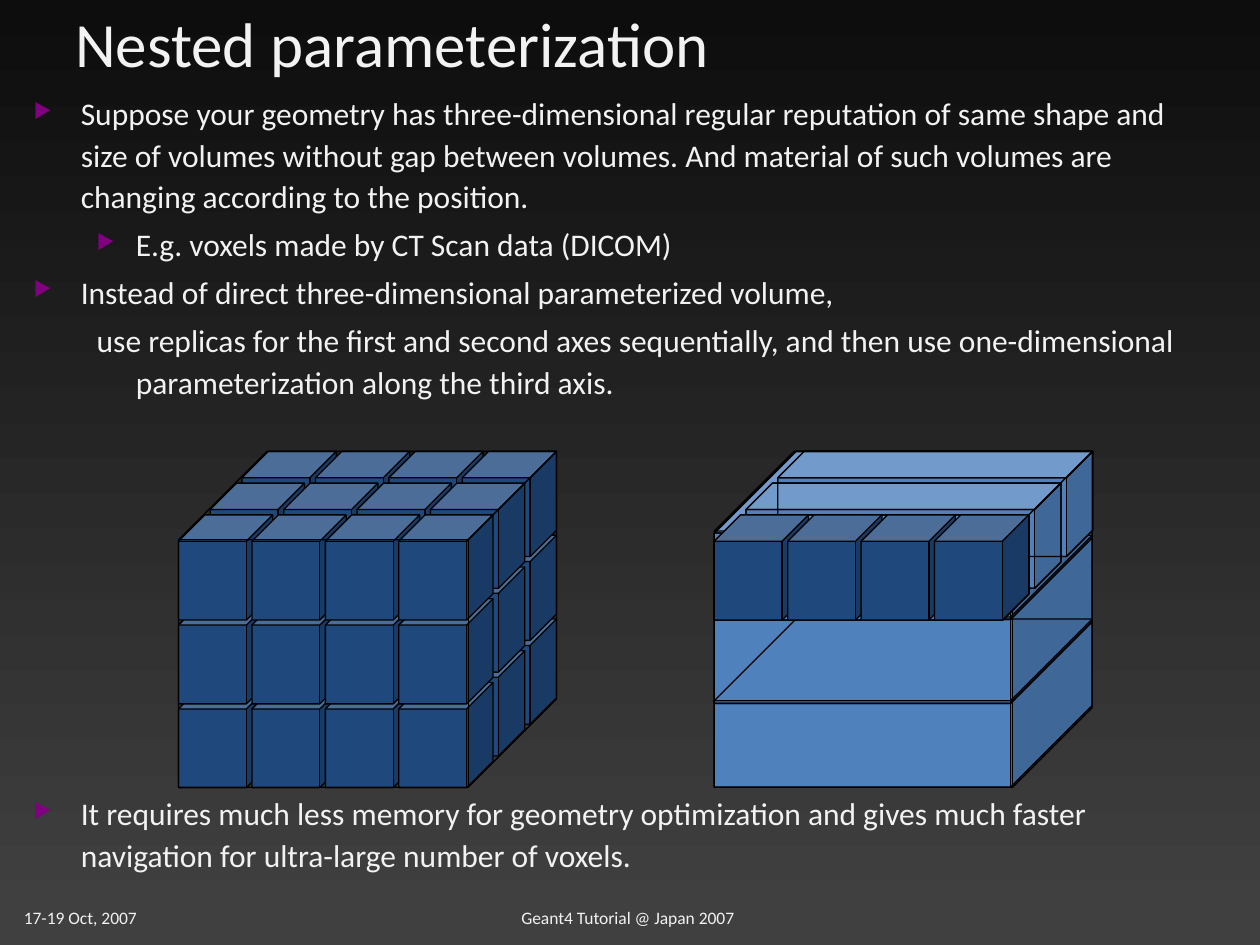
from lxml import etree
from pptx import Presentation, util as u
from pptx.dml.color import RGBColor
from pptx.enum import shapes, text
from pptx.oxml.ns import qn

NAVY, BLUE, BLACK, WHITE, PURPLE = "1F497D", "4F81BD", "000000", "F2F2F2", "800080"
TOP, STEP, RISE, PITCH = 9.1, 0.64, 1.69, 1.48
LEFT, RIGHT = 3.6, 14.4

BODY = [
    (0, True, 0, "Suppose your geometry has three-dimensional regular reputation of same shape and size of volumes without gap between volumes. And material of such volumes are changing according to the position."),
    (1, True, 3.6, "E.g. voxels made by CT Scan data (DICOM)"),
    (0, True, 3.6, "Instead of direct three-dimensional parameterized volume,"),
    (1, False, 3.6, "use replicas for the first and second axes sequentially, and then use one-dimensional parameterization along the third axis."),
    (0, True, 223, "It requires much less memory for geometry optimization and gives much faster navigation for ultra-large number of voxels."),
]


def tint(code):
    return RGBColor.from_string(code)


class Deck:
    """Holds the text style and the current slide."""

    def __init__(self, slide, font="Calibri"):
        self.slide, self.font = slide, font

    def ground(self, low, high):
        fill = self.slide.background.fill
        fill.gradient()
        fill.gradient_angle = 90
        for stop, place, code in zip(fill.gradient_stops, (0.03, 1), (low, high)):
            stop.position = place
            stop.color.rgb = tint(code)

    def style(self, para, size):
        for run in para.runs:
            run.font.name, run.font.size = self.font, u.Pt(size)
            run.font.color.rgb = tint(WHITE)

    def label(self, words, box, size, wrap=False):
        frame = self.slide.shapes.add_textbox(*map(u.Cm, box)).text_frame
        frame.word_wrap = wrap
        frame.vertical_anchor = text.MSO_ANCHOR.MIDDLE
        frame.text = words
        self.style(frame.paragraphs[0], size)

    def cube(self, x, y, wide, high, depth, fill=None):
        shape = self.slide.shapes.add_shape(
            shapes.MSO_SHAPE.CUBE, *map(u.Cm, (x, y, wide, high)))
        shape.shadow.inherit = False
        shape.adjustments[0] = depth
        if fill:
            shape.fill.solid()
            shape.fill.fore_color.rgb = tint(fill)
        else:
            shape.fill.background()
        shape.line.color.rgb = tint(BLACK)
        shape.line.width = u.Pt(0.75)

    def voxel(self, x, y):
        self.cube(x, y, 1.9, 2.12, 0.28, NAVY)

    def bullet(self, props):
        color = etree.SubElement(props, qn("a:buClr"))
        etree.SubElement(color, qn("a:srgbClr"), val=PURPLE)
        etree.SubElement(props, qn("a:buSzPct"), val="65000")
        etree.SubElement(props, qn("a:buChar"), char="▶")

    def list(self, items, box, size):
        frame = self.slide.shapes.add_textbox(*map(u.Cm, box)).text_frame
        frame.word_wrap = True
        for n, (level, mark, gap, words) in enumerate(items):
            para = frame.add_paragraph() if n else frame.paragraphs[0]
            para.text = words
            para.level = level
            props = para._p.get_or_add_pPr()
            margin, hang = ((0.95, 0.95), (2.06, 0.79))[level]
            props.set("marL", str(u.Cm(margin)))
            props.set("indent", str(-u.Cm(hang)))
            if mark:
                self.bullet(props)
            para.line_spacing = 1.1
            para.space_before = u.Pt(gap)
            self.style(para, size)


def main():
    show = Presentation()
    show.slide_width, show.slide_height = u.Cm(25.4), u.Cm(19.05)
    deck = Deck(show.slides.add_slide(show.slide_layouts[6]))
    deck.ground("404040", "0D0D0D")
    deck.label("17-19 Oct, 2007", (0.23, 18.16, 2.84, 0.69), 10)
    deck.label("Geant4 Tutorial @ Japan 2007", (10.26, 18.16, 4.9, 0.69), 10)
    deck.label("Nested parameterization", (1.27, -0.2, 22.86, 2.11), 36, True)

    for row in (2, 1, 0):
        for back in (2, 1, 0):
            for col in range(4):
                deck.voxel(LEFT + PITCH * col + STEP * back,
                           TOP + RISE * row + STEP * (2 - back))

    for fill in (BLUE, None):
        for row in (2, 1, 0):
            deck.cube(RIGHT, TOP + RISE * row, 7.62, 3.39, 0.486, fill)
    for fill in (BLUE, None):
        for back in (2, 1, 0):
            deck.cube(RIGHT + STEP * back, TOP + STEP * (2 - back),
                      6.35, 2.12, 0.25, fill)
    for x, depth in ((RIGHT, 0.237), (LEFT, 0.263)):
        deck.cube(x, TOP, 7.62, 6.77, depth)
    for col in range(4):
        deck.voxel(RIGHT + PITCH * col, TOP + STEP * 2)

    deck.list(BODY, (0.43, 1.7, 24.13, 16.71), 18)
    show.save("out.pptx")


if __name__ == "__main__":
    main()
